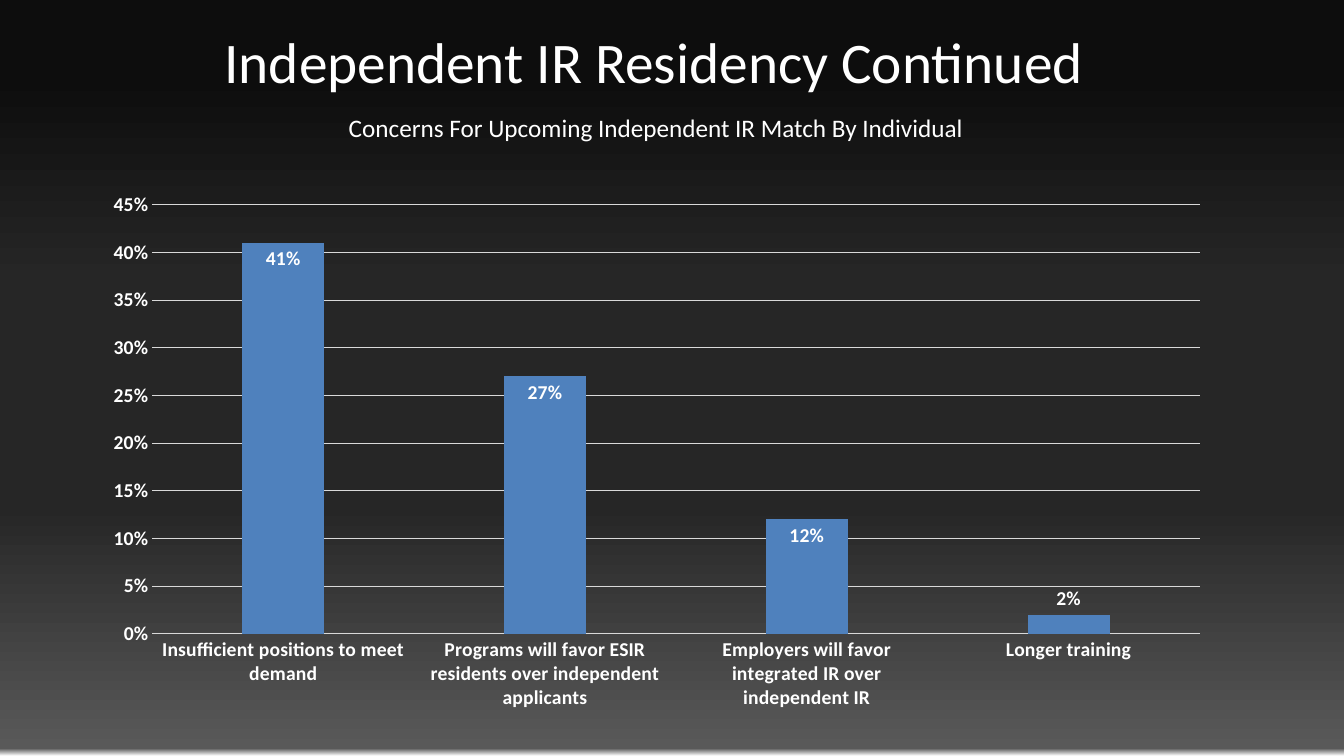
from typing import NamedTuple

import pptx
import pptx.chart.data
import pptx.dml.color
import pptx.enum.chart
import pptx.enum.text
import pptx.oxml
import pptx.oxml.ns
import pptx.util
from pptx.util import Pt

FONT = "Calibri"
WHITE = "FFFFFF"
RULE_GREY = "D9D9D9"
BAR_BLUE = "4F81BD"


class GradientStop(NamedTuple):
    percent: int
    color: str


class Concern(NamedTuple):
    label: str
    share: float


BACKDROP = [
    GradientStop(10, "0D0D0D"),
    GradientStop(37, "262626"),
    GradientStop(67, "262626"),
    GradientStop(99, "595959"),
    GradientStop(100, WHITE),
]

CONCERNS = [
    Concern("Insufficient positions to meet demand", 0.41),
    Concern("Programs will favor ESIR residents over independent applicants", 0.27),
    Concern("Employers will favor integrated IR over independent IR", 0.12),
    Concern("Longer training", 0.02),
]


def rgb(color: str) -> pptx.dml.color.RGBColor:
    return pptx.dml.color.RGBColor.from_string(color)


def style_font(font, size: float, bold: bool = False) -> None:
    font.name = FONT
    font.size = Pt(size)
    font.bold = bold
    font.color.rgb = rgb(WHITE)


def paint_backdrop(slide, stops: list[GradientStop]) -> None:
    """Fill the slide background with a gradient running from top to bottom."""
    fill = slide.background.fill
    fill.gradient()
    fill.gradient_angle = 270
    stop_list = slide.element.find(".//" + pptx.oxml.ns.qn("a:gsLst"))
    for old_stop in list(stop_list):
        stop_list.remove(old_stop)
    for stop in stops:
        stop_list.append(pptx.oxml.parse_xml(
            f'<a:gs {pptx.oxml.ns.nsdecls("a")} pos="{stop.percent * 1000}">'
            f'<a:srgbClr val="{stop.color}"/></a:gs>'
        ))


def place_heading(shape, text: str, size: float, anchor) -> None:
    """Write one centred line of text into a title or text box."""
    frame = shape.text_frame
    frame.text = text
    frame.word_wrap = True
    frame.auto_size = pptx.enum.text.MSO_AUTO_SIZE.NONE
    frame.vertical_anchor = anchor
    paragraph = frame.paragraphs[0]
    paragraph.alignment = pptx.enum.text.PP_ALIGN.CENTER
    style_font(paragraph.font, size)


def style_rule(line) -> None:
    line.color.rgb = rgb(RULE_GREY)
    line.width = Pt(0.75)


def add_concern_chart(slide, concerns: list[Concern]) -> None:
    data = pptx.chart.data.CategoryChartData(number_format="0%")
    data.categories = [concern.label for concern in concerns]
    data.add_series("Series 1", [concern.share for concern in concerns])
    chart = slide.shapes.add_chart(
        pptx.enum.chart.XL_CHART_TYPE.COLUMN_CLUSTERED,
        Pt(65), Pt(130), Pt(808), Pt(385), data,
    ).chart
    chart.has_legend = False
    chart.has_title = False
    chart.font.name = FONT
    chart.font.size = Pt(10)

    for axis in (chart.category_axis, chart.value_axis):
        axis.major_tick_mark = pptx.enum.chart.XL_TICK_MARK.NONE
        axis.minor_tick_mark = pptx.enum.chart.XL_TICK_MARK.NONE
        style_font(axis.tick_labels.font, 14, bold=True)
    style_rule(chart.category_axis.format.line)

    share_axis = chart.value_axis
    share_axis.minimum_scale = 0
    share_axis.maximum_scale = 0.45
    share_axis.major_unit = 0.05
    share_axis.tick_labels.number_format = "0%"
    share_axis.tick_labels.number_format_is_linked = False
    share_axis.format.line.fill.background()
    style_rule(share_axis.major_gridlines.format.line)

    plot = chart.plots[0]
    plot.vary_by_categories = False
    plot.gap_width = 219
    plot.overlap = -27
    bars = plot.series[0]
    bars.format.fill.solid()
    bars.format.fill.fore_color.rgb = rgb(BAR_BLUE)

    labels = bars.data_labels
    labels.show_value = True
    labels.number_format = "0%"
    labels.number_format_is_linked = False
    labels.position = pptx.enum.chart.XL_LABEL_POSITION.INSIDE_END
    style_font(labels.font, 14, bold=True)

    # The last bar is too short to hold its label.
    short_bar_label = bars.points[len(concerns) - 1].data_label
    style_font(short_bar_label.font, 14, bold=True)
    short_bar_label.position = pptx.enum.chart.XL_LABEL_POSITION.OUTSIDE_END


def main() -> None:
    deck = pptx.Presentation()
    deck.slide_width = Pt(960)
    deck.slide_height = Pt(540)
    slide = deck.slides.add_slide(deck.slide_layouts[5])
    paint_backdrop(slide, BACKDROP)

    title = slide.shapes.title
    title.left, title.top = Pt(143.5), Pt(11.5)
    title.width, title.height = Pt(648), Pt(64)
    place_heading(title, "Independent IR Residency Continued", 41,
                  pptx.enum.text.MSO_ANCHOR.MIDDLE)

    subtitle = slide.shapes.add_textbox(Pt(168.5), Pt(76.5), Pt(600), Pt(29))
    place_heading(subtitle, "Concerns For Upcoming Independent IR Match By Individual",
                  18, pptx.enum.text.MSO_ANCHOR.TOP)

    add_concern_chart(slide, CONCERNS)
    deck.save("out.pptx")


if __name__ == "__main__":
    main()
